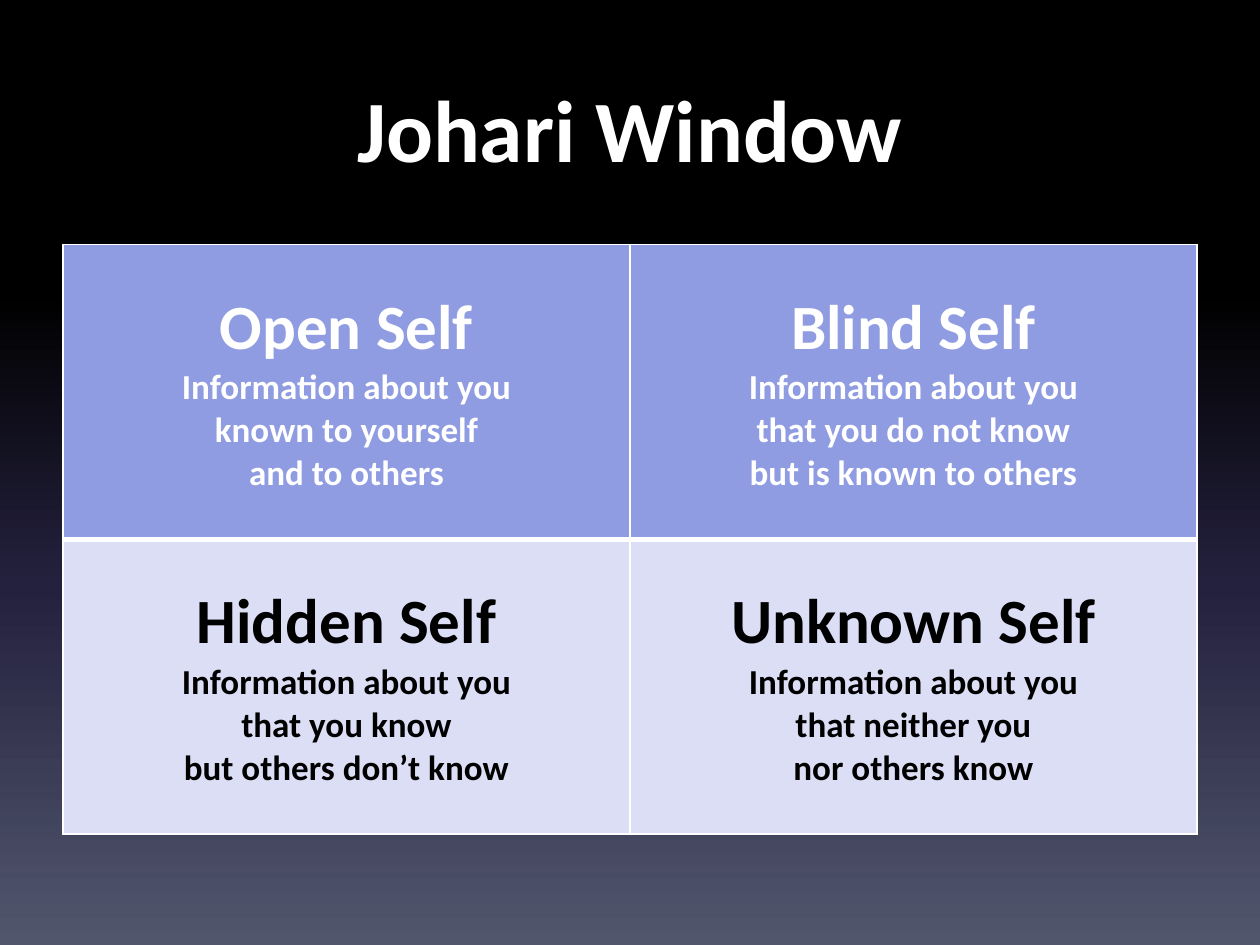
from lxml import etree
from pptx import Presentation
from pptx.dml.color import RGBColor
from pptx.enum.text import MSO_ANCHOR, PP_ALIGN
from pptx.oxml.ns import qn
from pptx.util import Inches, Pt

MIDDLE = MSO_ANCHOR.MIDDLE
CENTER = PP_ALIGN.CENTER
TITLE_ONLY = 5
FONT = "Calibri"
COLORS = {
    "white": "FFFFFF",
    "black": "000000",
    "known": "909CE1",
    "unknown": "DBDEF4",
    "navy": "24213E",
    "slate": "51566D",
}
BACKGROUND_STOPS = [(0, "black"), (31, "black"), (62, "navy"), (100, "slate")]

# Each row: fill, text colour, quadrants (heading followed by its lines)
WINDOW = [
    ("known", "white", [
        ["Open Self", "Information about you", "known to yourself", "and to others"],
        ["Blind Self", "Information about you", "that you do not know",
         "but is known to others"],
    ]),
    ("unknown", "black", [
        ["Hidden Self", "Information about you", "that you know",
         "but others don’t know"],
        ["Unknown Self", "Information about you", "that neither you",
         "nor others know"],
    ]),
]


def write_text(paragraph, text, size, color, bold=True, align=CENTER):
    paragraph.alignment = align
    run = paragraph.add_run()
    run.text = text
    run.font.name = FONT
    run.font.size = Pt(size)
    run.font.bold = bold
    run.font.color.rgb = RGBColor.from_string(COLORS[color])


def paint_background(slide):
    fill = slide.background.fill
    fill.gradient()
    fill.gradient_angle = 270
    stops = next(slide.background._cSld.iter(qn("a:gsLst")))
    for stop in list(stops):
        stops.remove(stop)
    for percent, color in BACKGROUND_STOPS:
        stop = etree.SubElement(stops, qn("a:gs"), pos=str(percent * 1000))
        etree.SubElement(stop, qn("a:srgbClr"), val=COLORS[color])


def add_title(slide, text):
    title = slide.shapes.title
    title.left, title.top = Inches(0.5), Inches(0.5)
    title.width, title.height = Inches(9), Inches(1.25)
    frame = title.text_frame
    frame.vertical_anchor = MIDDLE
    frame.margin_bottom = Inches(0.27)
    write_text(frame.paragraphs[0], text, 50, "white")


def set_borders(cell, widths):
    properties = cell._tc.get_or_add_tcPr()
    for index, (side, width) in enumerate(widths.items()):
        line = etree.Element(qn(f"a:ln{side}"), w=str(Pt(width)))
        solid = etree.SubElement(line, qn("a:solidFill"))
        etree.SubElement(solid, qn("a:srgbClr"), val=COLORS["white"])
        properties.insert(index, line)


def fill_quadrant(cell, lines, fill, color):
    cell.fill.solid()
    cell.fill.fore_color.rgb = RGBColor.from_string(COLORS[fill])
    cell.vertical_anchor = MIDDLE
    frame = cell.text_frame
    heading, *details = lines
    write_text(frame.paragraphs[0], heading, 36, color)
    for detail in details:
        write_text(frame.add_paragraph(), detail, 20, color)


def add_window(slide):
    window = slide.shapes.add_table(
        2, 2, Inches(0.5), Inches(1.94), Inches(9), Inches(4.68)).table
    window.horz_banding = False
    for row, (fill, color, quadrants) in enumerate(WINDOW):
        # The divider between the two rows is heavier
        top, bottom = (1, 3) if row == 0 else (3, 1)
        for column, lines in enumerate(quadrants):
            cell = window.cell(row, column)
            fill_quadrant(cell, lines, fill, color)
            set_borders(cell, {"L": 1, "R": 1, "T": top, "B": bottom})


def main():
    presentation = Presentation()
    presentation.slide_width = Inches(10)
    presentation.slide_height = Inches(7.5)
    slide = presentation.slides.add_slide(presentation.slide_layouts[TITLE_ONLY])
    paint_background(slide)
    add_title(slide, "Johari Window")
    add_window(slide)
    presentation.save("out.pptx")


if __name__ == "__main__":
    main()
